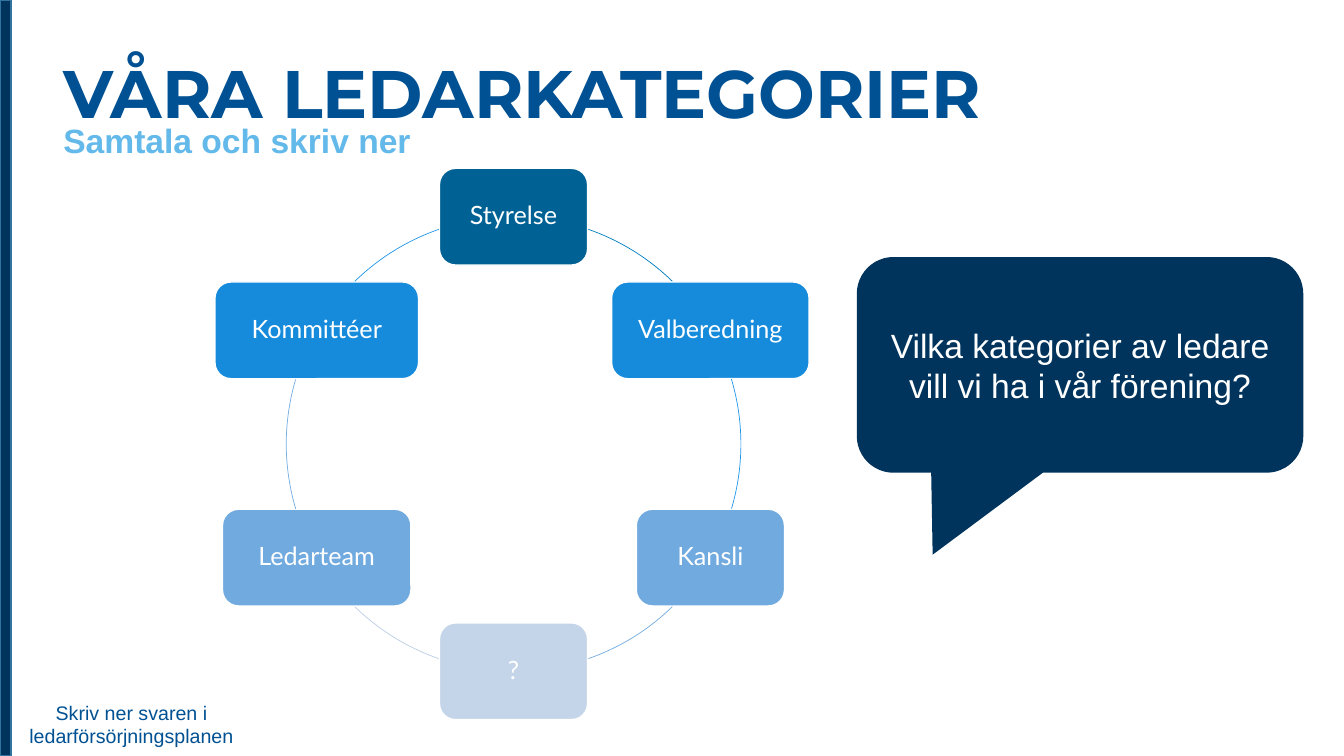
from math import cos, radians, sin

from pptx import Presentation
from pptx.dml.color import RGBColor
from pptx.enum.shapes import MSO_SHAPE
from pptx.enum.text import MSO_ANCHOR, PP_ALIGN
from pptx.util import Inches, Pt

NAVY = RGBColor(0x00, 0x34, 0x5C)
BAR_EDGE = RGBColor(0x32, 0x74, 0x9F)
TITLE_BLUE = RGBColor(0x00, 0x51, 0x93)
SKY = RGBColor(0x63, 0xB9, 0xE9)
WHITE = RGBColor(0xFF, 0xFF, 0xFF)
DEEP = RGBColor(0x00, 0x62, 0x94)
BRIGHT = RGBColor(0x16, 0x8B, 0xDC)
SOFT = RGBColor(0x71, 0xAA, 0xDF)
PALE = RGBColor(0xC5, 0xD5, 0xE9)
DEEP_ARC = RGBColor(0x00, 0x7F, 0xBF)
BRIGHT_ARC = RGBColor(0x22, 0x97, 0xE9)
SOFT_ARC = RGBColor(0x76, 0xAD, 0xE0)
PALE_ARC = RGBColor(0xBC, 0xCE, 0xE6)

# Square grid cells: 133.33 columns by 75 rows
CELL = Inches(0.1)
COLUMNS, ROWS = 133.33, 75

RING_CENTER = (50.95, 44.05)
RING_RADIUS = 22.55
NODE_HEIGHT = 9.6

# Clockwise from the top: text, width, fill, colour of the following arc, arc angles
RING = [
    ("Styrelse", 14.7, DEEP, DEEP_ARC, (19.2, 44.3)),
    ("Valberedning", 19.6, BRIGHT, BRIGHT_ARC, (73.4, 106.6)),
    ("Kansli", 14.7, SOFT, SOFT_ARC, (135.7, 160.8)),
    ("?", 14.7, PALE, PALE_ARC, (199.2, 224.3)),
    ("Ledarteam", 18.7, SOFT, SOFT_ARC, (253.4, 286.6)),
    ("Kommittéer", 20.2, BRIGHT, BRIGHT_ARC, (315.7, 340.8)),
]


class SlideBuilder:
    STYLES = {
        "title": ({"name": "Montserrat", "size": Pt(48), "bold": True}, TITLE_BLUE,
                  {"line_spacing": Pt(50)}),
        "subtitle": ({"name": "Arial", "size": Pt(24), "bold": True}, SKY,
                     {"line_spacing": 0.8}),
        "node": ({"name": "Lato", "size": Pt(18)}, WHITE,
                 {"alignment": PP_ALIGN.CENTER, "line_spacing": 0.9}),
        "callout": ({"name": "Arial", "size": Pt(24)}, WHITE,
                    {"alignment": PP_ALIGN.CENTER}),
        "note": ({"name": "Arial", "size": Pt(14)}, TITLE_BLUE,
                 {"alignment": PP_ALIGN.CENTER}),
    }

    def __init__(self, slide):
        self.slide = slide

    def place(self, *cells):
        return [round(cell * CELL) for cell in cells]

    def set_text(self, shape, text, style, anchor):
        font_values, color, paragraph_values = self.STYLES[style]
        frame = shape.text_frame
        frame.word_wrap = True
        frame.vertical_anchor = anchor
        paragraph = frame.paragraphs[0]
        paragraph.text = text
        for target, values in ((paragraph, paragraph_values), (paragraph.font, font_values)):
            for name, value in values.items():
                setattr(target, name, value)
        paragraph.font.color.rgb = color

    def text(self, cells, text, style, anchor=MSO_ANCHOR.TOP):
        box = self.slide.shapes.add_textbox(*self.place(*cells))
        self.set_text(box, text, style, anchor)

    def shape(self, kind, cells, fill=None, line=None, line_width=1, adjustments=()):
        shape = self.slide.shapes.add_shape(kind, *self.place(*cells))
        shape.shadow.inherit = False
        for part, color in ((shape.fill, fill), (shape.line.fill, line)):
            if color is None:
                part.background()
            else:
                part.solid()
                part.fore_color.rgb = color
        if line is not None:
            shape.line.width = Pt(line_width)
        for index, value in enumerate(adjustments):
            shape.adjustments[index] = value
        return shape

    def node(self, angle, text, width, fill):
        """Centre a rounded box on the ring, at degrees clockwise from the top."""
        left = RING_CENTER[0] + RING_RADIUS * sin(radians(angle)) - width / 2
        top = RING_CENTER[1] - RING_RADIUS * cos(radians(angle)) - NODE_HEIGHT / 2
        box = self.shape(MSO_SHAPE.ROUNDED_RECTANGLE, (left, top, width, NODE_HEIGHT),
                         fill, WHITE)
        self.set_text(box, text, "node", MSO_ANCHOR.MIDDLE)

    def arc(self, angles, color):
        """Draw a part of the ring between two angles clockwise from the top."""
        left, top = (center - RING_RADIUS for center in RING_CENTER)
        # An arc counts from the right, and 0.6 adjustment units make one degree
        adjustments = [(angle - 90) % 360 * 0.6 for angle in angles]
        self.shape(MSO_SHAPE.ARC, (left, top, 2 * RING_RADIUS, 2 * RING_RADIUS),
                   line=color, line_width=0.5, adjustments=adjustments)

    def callout(self, cells, text):
        bubble = self.shape(MSO_SHAPE.ROUNDED_RECTANGULAR_CALLOUT, cells, NAVY,
                            adjustments=(-0.33, 0.88, 0.17))
        self.set_text(bubble, text, "callout", MSO_ANCHOR.MIDDLE)


def main():
    presentation = Presentation()
    presentation.slide_width = round(COLUMNS * CELL)
    presentation.slide_height = ROWS * CELL
    builder = SlideBuilder(presentation.slides.add_slide(presentation.slide_layouts[6]))

    builder.shape(MSO_SHAPE.RECTANGLE, (0, 0, 1.1, ROWS), NAVY, BAR_EDGE)
    builder.text((5.3, 5.4, 104.2, 8.5), "VÅRA LEDARKATEGORIER", "title", MSO_ANCHOR.MIDDLE)
    builder.text((5.3, 12.2, 104.2, 4.5), "Samtala och skriv ner", "subtitle")

    for index, (text, width, fill, arc_color, arc_angles) in enumerate(RING):
        builder.node(index * 360 / len(RING), text, width, fill)
        builder.arc(arc_angles, arc_color)

    builder.callout((85, 25.5, 44.3, 21.4),
                    "Vilka kategorier av ledare vill vi ha i vår förening?")
    # The narrow box breaks the note after "i"
    builder.text((0.9, 69, 24.3, 5.7), "Skriv ner svaren i ledarförsörjningsplanen", "note")
    presentation.save("out.pptx")


if __name__ == "__main__":
    main()
